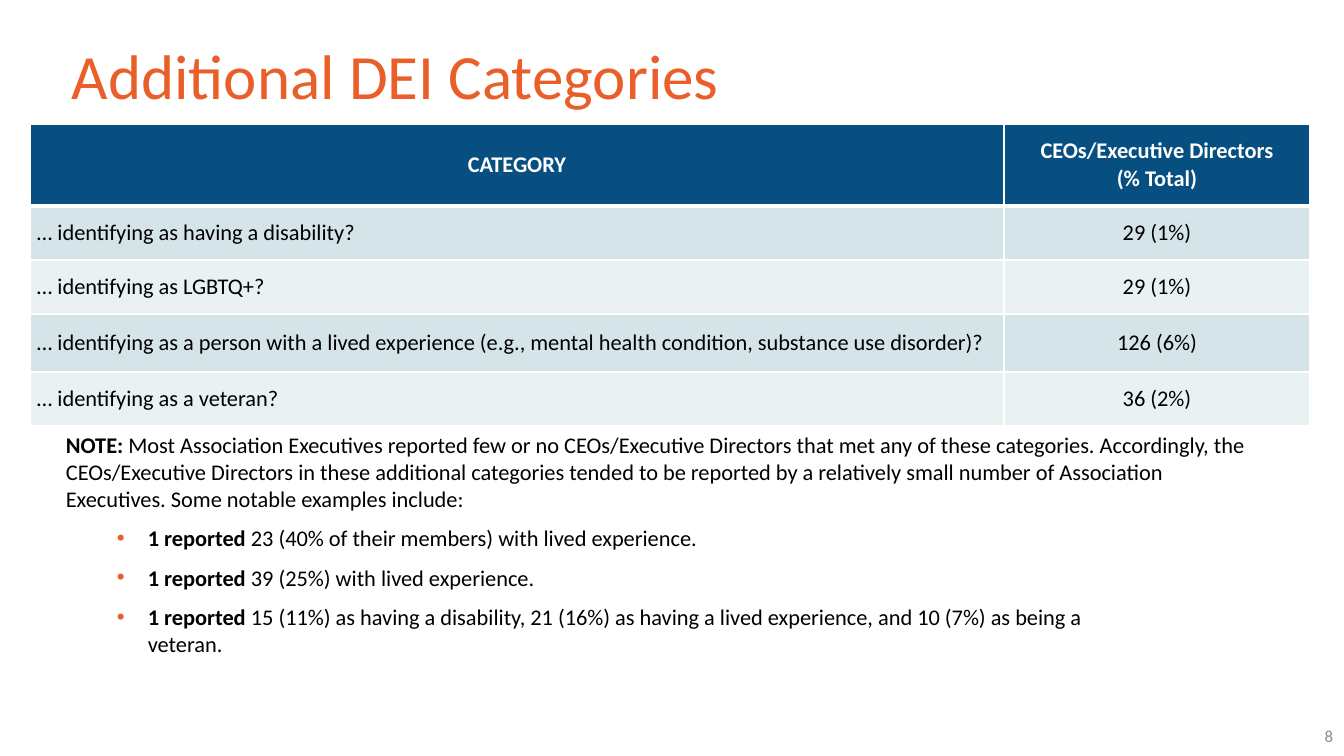
from lxml.etree import SubElement
from pptx import Presentation
from pptx.dml.color import RGBColor
from pptx.enum.text import MSO_ANCHOR, PP_ALIGN
from pptx.oxml.ns import qn
from pptx.util import Emu, Pt

PX = 914400 / 100.8
FONT = "Calibri"
COLORS = {
    "orange": "EA5E29",
    "navy": "064F80",
    "teal": "ACCAD3",
    "white": "FFFFFF",
    "black": "000000",
    "gray": "8C8C8C",
}
COLUMNS = [974, 306]
ROW_HEIGHTS = [82, 54, 54, 58, 54]
ROWS = [
    ("CATEGORY", "CEOs/Executive Directors\v(% Total)"),
    ("… identifying as having a disability?", "29 (1%)"),
    ("… identifying as LGBTQ+?", "29 (1%)"),
    ("… identifying as a person with a lived experience (e.g., mental health "
     "condition, substance use disorder)?", "126 (6%)"),
    ("… identifying as a veteran?", "36 (2%)"),
]
NOTE = (
    "Most Association Executives reported few or no CEOs/Executive Directors that "
    "met any of these categories. Accordingly, the CEOs/Executive Directors in these "
    "additional categories tended to be reported by a relatively small number of "
    "Association Executives. Some notable examples include:"
)
EXAMPLES = [
    "23 (40% of their members) with lived experience.",
    "39 (25%) with lived experience.",
    "15 (11%) as having a disability, 21 (16%) as having a lived experience, "
    "and 10 (7%) as being a\vveteran.",
]


def px(n):
    return Emu(round(n * PX))


def set_attrs(obj, values):
    for name, value in values.items():
        setattr(obj, name, value)


def add_run(p, text, size=16, color="black", bold=False):
    for i, line in enumerate(text.split("\v")):
        if i:
            p.add_line_break()
        r = p.add_run()
        r.text = line
        set_attrs(r.font, {"name": FONT, "size": Pt(size), "bold": bold})
        r.font.color.rgb = RGBColor.from_string(COLORS[color])


def add_text_box(s, left, top, width, height, anchor=MSO_ANCHOR.MIDDLE):
    tf = s.shapes.add_textbox(px(left), px(top), px(width), px(height)).text_frame
    set_attrs(tf, {"word_wrap": True, "vertical_anchor": anchor})
    return tf


def add_bullet(p, indent, hanging):
    pPr = p._p.get_or_add_pPr()
    pPr.set("marL", str(px(indent)))
    pPr.set("indent", str(-px(hanging)))
    color = SubElement(pPr, qn("a:buClr"))
    SubElement(color, qn("a:srgbClr"), val=COLORS["orange"])
    SubElement(pPr, qn("a:buFont"), typeface="Arial")
    SubElement(pPr, qn("a:buChar"), char="•")


def set_border(tcPr, side, width):
    ln = SubElement(tcPr, qn(f"a:ln{side}"), w=str(Pt(width)))
    fill = SubElement(ln, qn("a:solidFill"))
    SubElement(fill, qn("a:srgbClr"), val=COLORS["white"])


def fill_cell(cell, color, opacity):
    cell.fill.solid()
    cell.fill.fore_color.rgb = RGBColor.from_string(COLORS[color])
    if opacity < 100:
        srgb = cell._tc.tcPr.find(qn("a:solidFill")).find(qn("a:srgbClr"))
        SubElement(srgb, qn("a:alpha"), val=str(opacity * 1000))


def format_cell(cell, text, row, col):
    header = row == 0
    set_attrs(cell, {
        "margin_left": px(7), "margin_right": px(7),
        "margin_top": 0, "margin_bottom": 0,
        "vertical_anchor": MSO_ANCHOR.MIDDLE,
    })
    p = cell.text_frame.paragraphs[0]
    p.alignment = PP_ALIGN.CENTER if header or col else PP_ALIGN.LEFT
    add_run(p, text, color="white" if header else "black", bold=header)

    # Borders come before the fill; the header has a heavy rule below it
    tcPr = cell._tc.get_or_add_tcPr()
    for side in "LRTB":
        heavy = (header and side == "B") or (row == 1 and side == "T")
        set_border(tcPr, side, 3 if heavy else 1)
    if header:
        fill_cell(cell, "navy", 100)
    else:
        fill_cell(cell, "teal", 50 if row % 2 else 25)


def add_category_table(s, left, top):
    frame = s.shapes.add_table(len(ROWS), len(COLUMNS), px(left), px(top),
                               px(sum(COLUMNS)), px(sum(ROW_HEIGHTS)))
    table = frame.table
    table.horz_banding = False
    for column, width in zip(table.columns, COLUMNS):
        column.width = px(width)
    for i, (height, texts) in enumerate(zip(ROW_HEIGHTS, ROWS)):
        table.rows[i].height = px(height)
        for j, text in enumerate(texts):
            format_cell(table.cell(i, j), text, i, j)


def add_note(s):
    tf = add_text_box(s, 56, 425, 1220, 238)
    p = tf.paragraphs[0]
    add_run(p, "NOTE: ", bold=True)
    add_run(p, NOTE)
    for example in EXAMPLES:
        p = tf.add_paragraph()
        p.space_before = Pt(9)
        add_bullet(p, 82, 31)
        add_run(p, "1 reported ", bold=True)
        add_run(p, example)


def main():
    prs = Presentation()
    set_attrs(prs, {"slide_width": px(1344), "slide_height": px(756)})
    s = prs.slides.add_slide(prs.slide_layouts[6])

    # Title
    p = add_text_box(s, 62, 40, 1220, 146, MSO_ANCHOR.TOP).paragraphs[0]
    p.line_spacing = 0.9
    add_run(p, "Additional DEI Categories", 45, "orange")

    # Table and the note below it
    add_category_table(s, 30, 124)
    add_note(s)

    # Slide number
    p = add_text_box(s, 1041, 716, 302, 40).paragraphs[0]
    p.alignment = PP_ALIGN.RIGHT
    add_run(p, "8", 12, "gray")

    prs.save("out.pptx")


if __name__ == "__main__":
    main()
